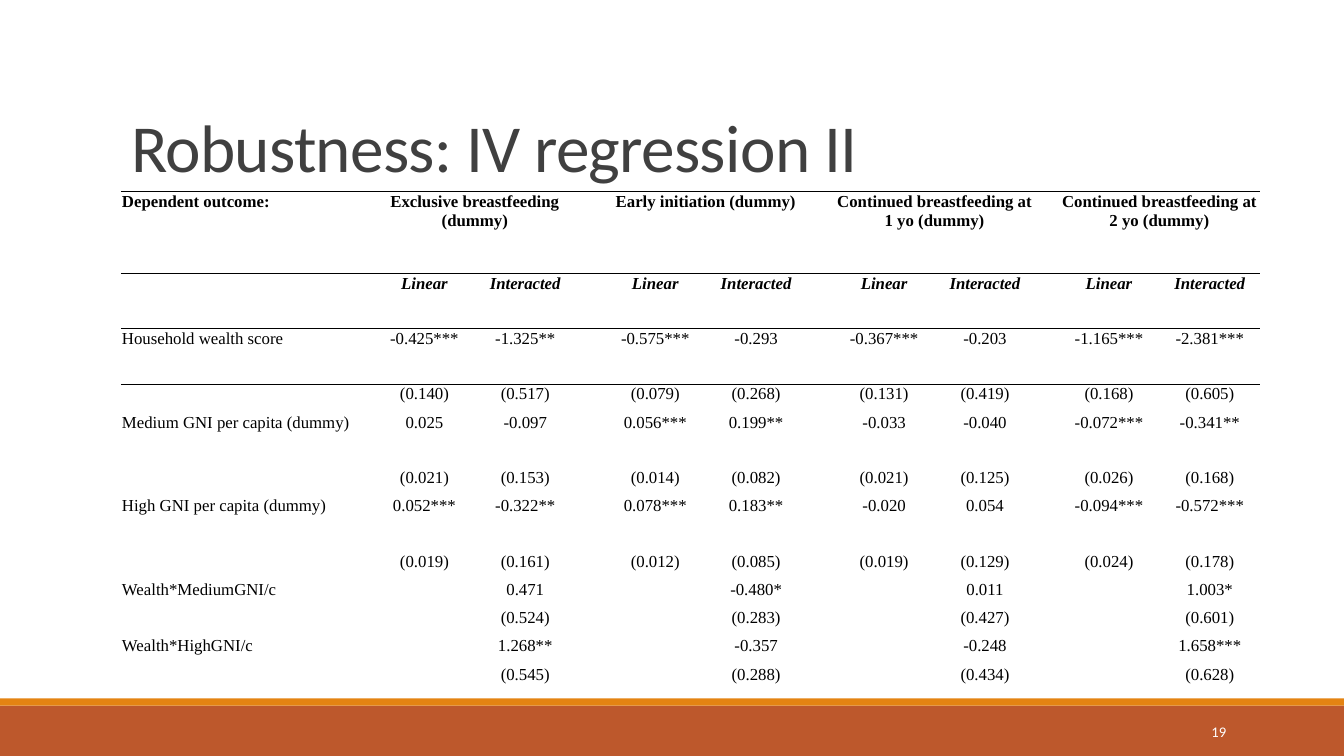
"""Build the slide with the second table of IV regression robustness results."""
from lxml import etree
from pptx import Presentation
from pptx.dml.color import RGBColor
from pptx.enum.shapes import MSO_CONNECTOR, MSO_SHAPE
from pptx.enum.text import MSO_ANCHOR, MSO_AUTO_SIZE, PP_ALIGN
from pptx.oxml.ns import qn
from pptx.util import Pt

PX = 9144
RECTANGLE, STRAIGHT = MSO_SHAPE.RECTANGLE, MSO_CONNECTOR.STRAIGHT
BOTTOM, MIDDLE = MSO_ANCHOR.BOTTOM, MSO_ANCHOR.MIDDLE
LEFT, CENTER, RIGHT = PP_ALIGN.LEFT, PP_ALIGN.CENTER, PP_ALIGN.RIGHT
NO_AUTOFIT = MSO_AUTO_SIZE.NONE
NO_GRID_STYLE = "{2D5ABB26-0587-4C30-8999-92F81FD0307C}"
COLORS = {"footer": "BD582C", "stripe": "E48312", "rule": "808080",
          "title": "404040", "number": "FFFFFF", "table": "000000"}

OUTCOMES = ["Exclusive breastfeeding (dummy)", "Early initiation (dummy)",
            "Continued breastfeeding at 1 yo (dummy)",
            "Continued breastfeeding at 2 yo (dummy)"]
FULL_ESTIMATES = [
    ("Household wealth score",
     "-0.425*** -1.325** -0.575*** -0.293 -0.367*** -0.203 -1.165*** -2.381***",
     "(0.140) (0.517) (0.079) (0.268) (0.131) (0.419) (0.168) (0.605)"),
    ("Medium GNI per capita (dummy)",
     "0.025 -0.097 0.056*** 0.199** -0.033 -0.040 -0.072*** -0.341**",
     "(0.021) (0.153) (0.014) (0.082) (0.021) (0.125) (0.026) (0.168)"),
    ("High GNI per capita (dummy)",
     "0.052*** -0.322** 0.078*** 0.183** -0.020 0.054 -0.094*** -0.572***",
     "(0.019) (0.161) (0.012) (0.085) (0.019) (0.129) (0.024) (0.178)"),
]
INTERACTION_ESTIMATES = [
    ("Wealth*MediumGNI/c", "0.471 -0.480* 0.011 1.003*",
     "(0.524) (0.283) (0.427) (0.601)"),
    ("Wealth*HighGNI/c", "1.268** -0.357 -0.248 1.658***",
     "(0.545) (0.288) (0.434) (0.628)"),
]
VALUE_COLUMNS = [1, 2, 4, 5, 7, 8, 10, 11]
LINEAR_COLUMNS, INTERACTED_COLUMNS = VALUE_COLUMNS[::2], VALUE_COLUMNS[1::2]
COLUMN_WIDTHS = [251, 100, 100, 29, 100, 100, 27, 100, 100, 23, 100, 100]
ROW_HEIGHTS = [81, 55] + [55, 28] * 3 + [28] * 4


def format_run(run, font, size, color, bold=False, italic=False):
    run.font.name = font
    run.font.size = Pt(size)
    run.font.color.rgb = RGBColor.from_string(COLORS[color])
    run.font.bold = bold
    run.font.italic = italic


def add_border(cell, side):
    border = etree.SubElement(cell._tc.get_or_add_tcPr(), qn(f"a:{side}"), w="6350")
    fill = etree.SubElement(border, qn("a:solidFill"))
    etree.SubElement(fill, qn("a:srgbClr"), val=COLORS["table"])


prs = Presentation()
prs.slide_width, prs.slide_height = 1333 * PX, 750 * PX
slide = prs.slides.add_slide(prs.slide_layouts[5])
shapes = slide.shapes

for color, top, height in [("footer", 700, 50), ("stripe", 693, 7)]:
    band = shapes.add_shape(RECTANGLE, 0, top * PX, prs.slide_width, height * PX)
    band.shadow.inherit = False
    band.fill.solid()
    band.fill.fore_color.rgb = RGBColor.from_string(COLORS[color])
    band.line.fill.background()

title_rule = shapes.add_connector(STRAIGHT, 131 * PX, 190 * PX, 1221 * PX, 190 * PX)
title_rule.line.color.rgb = RGBColor.from_string(COLORS["rule"])
title_rule.line.width = Pt(0.5)
etree.SubElement(title_rule._element.spPr, qn("a:effectLst"))

title = shapes.title
title.left, title.top, title.width, title.height = 120 * PX, 31 * PX, 1100 * PX, 159 * PX
title.text_frame.text = "Robustness: IV regression II"
title.text_frame.auto_size = NO_AUTOFIT
title.text_frame.vertical_anchor = BOTTOM
heading = title.text_frame.paragraphs[0]
heading.alignment = LEFT
heading.line_spacing = 0.85
format_run(heading.runs[0], "Calibri", 48, "title")
heading.runs[0].font._element.set("spc", "-50")

page_number = shapes.add_textbox(1083 * PX, 706 * PX, 143 * PX, 40 * PX).text_frame
page_number.word_wrap = True
page_number.vertical_anchor = MIDDLE
page_number.text = "19"
page_number.paragraphs[0].alignment = RIGHT
format_run(page_number.paragraphs[0].runs[0], "Calibri", 10.5, "number")

contents = {(0, 0): "Dependent outcome:"}
for column, outcome in zip(LINEAR_COLUMNS, OUTCOMES):
    contents[0, column] = outcome
    contents[1, column] = "Linear"
    contents[1, column + 1] = "Interacted"
row = 2
for estimates, columns in [(FULL_ESTIMATES, VALUE_COLUMNS),
                           (INTERACTION_ESTIMATES, INTERACTED_COLUMNS)]:
    for variable, coefficients, errors in estimates:
        contents[row, 0] = variable
        for column, coefficient, error in zip(columns, coefficients.split(), errors.split()):
            contents[row, column] = coefficient
            contents[row + 1, column] = error
        row += 2

results_frame = shapes.add_table(
    len(ROW_HEIGHTS), len(COLUMN_WIDTHS), 120 * PX, 190 * PX,
    sum(COLUMN_WIDTHS) * PX, sum(ROW_HEIGHTS) * PX)
results = results_frame.table
results.first_row = results.horz_banding = False
results._tbl.tblPr.find(qn("a:tableStyleId")).text = NO_GRID_STYLE
for column, width in enumerate(COLUMN_WIDTHS):
    results.columns[column].width = width * PX
for row, height in enumerate(ROW_HEIGHTS):
    results.rows[row].height = height * PX
    for column in range(len(COLUMN_WIDTHS)):
        cell = results.cell(row, column)
        cell.margin_left = cell.margin_right = cell.margin_top = PX
        cell.margin_bottom = 0
        if row <= 2:
            add_border(cell, "lnT")
        if row <= 1:
            add_border(cell, "lnB")
        cell.fill.background()
        cell.text_frame.text = contents.get((row, column), "")
        paragraph = cell.text_frame.paragraphs[0]
        paragraph.alignment = CENTER if column else LEFT
        for run in paragraph.runs:
            format_run(run, "Times New Roman", 12, "table", row <= 1, row == 1)
        if not paragraph.runs:
            etree.SubElement(paragraph._p, qn("a:endParaRPr"), sz="1200")
for column in LINEAR_COLUMNS:
    results.cell(0, column).merge(results.cell(0, column + 1))

prs.save("out.pptx")
